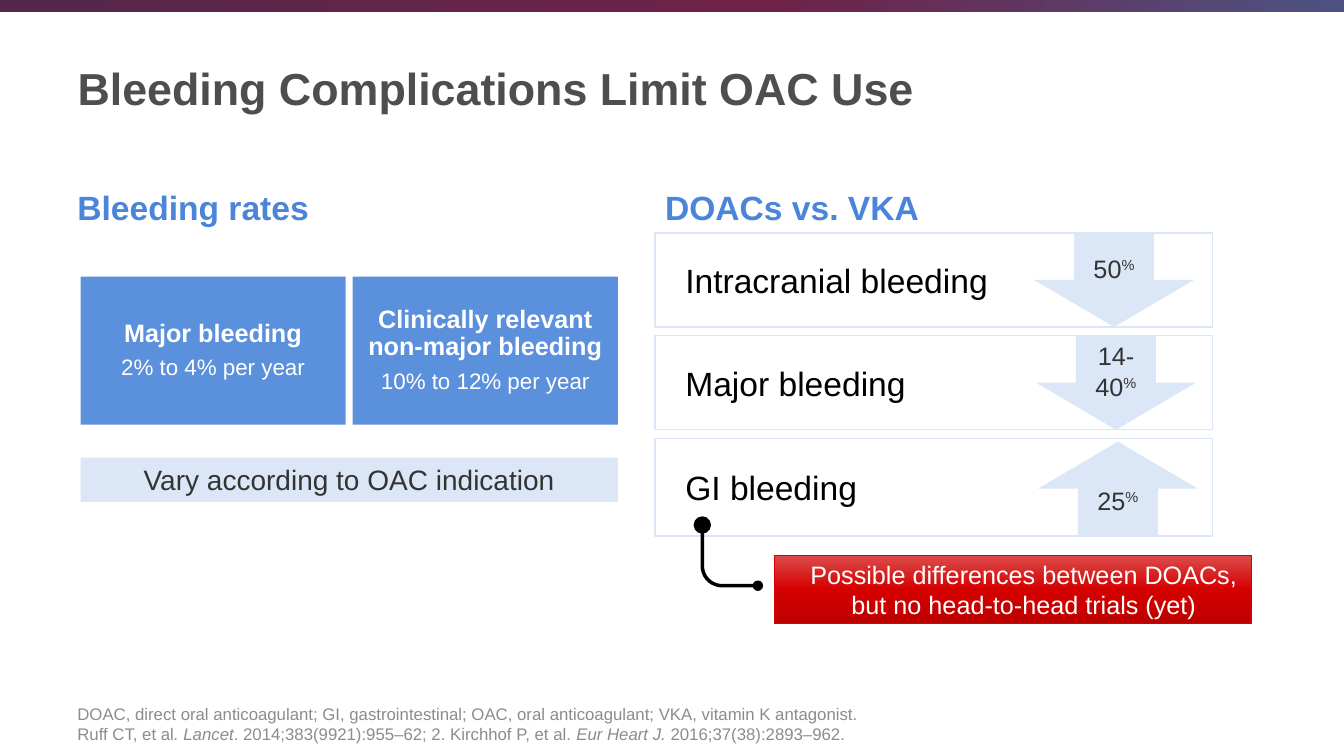
import copy
import math

import lxml.etree
import pptx
import pptx.dml.color
import pptx.enum.shapes
import pptx.enum.text
import pptx.oxml.ns
import pptx.util

Cm, Pt = pptx.util.Cm, pptx.util.Pt
rgb = pptx.dml.color.RGBColor.from_string
qn = pptx.oxml.ns.qn
SHAPE = pptx.enum.shapes.MSO_SHAPE
ALIGN = pptx.enum.text.PP_ALIGN
ANCHOR = pptx.enum.text.MSO_ANCHOR

BLUE, PALE, RED = "4A85D9", "DBE7F7", "D50000"
BLACK, DARK, WHITE = "000000", "333333", "FFFFFF"

prs = pptx.Presentation()
prs.slide_width, prs.slide_height = Cm(33.87), Cm(19.05)
s = prs.slides.add_slide(prs.slide_layouts[5])


def add_box(box, fill=None, line=None, width=1, kind=SHAPE.RECTANGLE, angle=0):
    """Add a shape; fill is a colour, a list of (position, colour) stops, or None."""
    sp = s.shapes.add_shape(kind, *[Cm(v) for v in box])
    sp.shadow.inherit = False
    if fill is None:
        sp.fill.background()
    elif isinstance(fill, str):
        sp.fill.solid()
        sp.fill.fore_color.rgb = rgb(fill)
    else:
        sp.fill.gradient()
        sp.fill.gradient_angle = angle
        stops = sp._element.spPr.find(".//" + qn("a:gsLst"))
        stops.append(copy.deepcopy(stops[-1]))
        for stop, (position, color) in zip(sp.fill.gradient_stops, fill):
            stop.position = position
            stop.color.rgb = rgb(color)
    if line:
        sp.line.color.rgb = rgb(line)
        sp.line.width = Pt(width)
    else:
        sp.line.fill.background()
    return sp


def write(p, text, size, color, bold=False, align=ALIGN.LEFT):
    p.text = text
    p.alignment = align
    p.font.name, p.font.size, p.font.bold = "Arial", Pt(size), bold
    p.font.color.rgb = rgb(color)


# Top band and title
add_box((0, 0, 33.87, 0.3), [(0, "54284B"), (0.57, "6F2147"), (1, "4D5282")])
title = s.shapes.title
title.left, title.top, title.width, title.height = Cm(1.7), Cm(0.56), Cm(29.85), Cm(3.3)
title.text_frame.vertical_anchor = ANCHOR.MIDDLE
write(title.text_frame.paragraphs[0], "Bleeding Complications Limit OAC Use", 32, "4D4E4D", True)

# Column headings and footnote
footnote = ("DOAC, direct oral anticoagulant; GI, gastrointestinal; OAC, oral anticoagulant; "
            "VKA, vitamin K antagonist.\vRuff CT, et al")
for text, left, top, width, height, size, color, bold in [
    ("Bleeding rates", 1.7, 4.06, 14.33, 1.8, 24, BLUE, True),
    ("DOACs vs. VKA", 16.51, 4.06, 14.4, 1.8, 24, BLUE, True),
    (footnote, 1.7, 17.65, 29.85, 1.22, 12, "8C8C8C", False),
]:
    tf = s.shapes.add_textbox(Cm(left), Cm(top), Cm(width), Cm(height)).text_frame
    tf.word_wrap = True
    tf.vertical_anchor = ANCHOR.BOTTOM
    p = tf.paragraphs[0]
    write(p, text, size, color, bold)

# The last paragraph written is the footnote; it goes on with the citations
for text, italic in [
    (". Lancet", True),
    (". 2014;383(9921):955–62; 2. Kirchhof P, et al. ", False),
    ("Eur Heart J. ", True),
    ("2016;37(38):2893–962.", False),
]:
    r = p.add_run()
    r.text = text
    r.font.italic = italic

# Bleeding rate cards
for i, (name, rate) in enumerate([
    ("Major bleeding", "2% to 4% per year"),
    ("Clinically relevant non-major bleeding", "10% to 12% per year"),
]):
    sp = add_box((2.03 + 6.86 * i, 6.97, 6.68, 3.73), BLUE)
    fill_color = sp._element.spPr.find(".//" + qn("a:srgbClr"))
    lxml.etree.SubElement(fill_color, qn("a:alpha"), val="90000")
    tf = sp.text_frame
    tf.margin_left = tf.margin_right = tf.margin_top = tf.margin_bottom = Cm(0.18)
    write(tf.paragraphs[0], name, 18, WHITE, True, ALIGN.CENTER)
    write(tf.add_paragraph(), rate, 16, WHITE, False, ALIGN.CENTER)
    for p, space in zip(tf.paragraphs, (6.3, 2.4)):
        p.line_spacing = 0.9
        p.space_after = Pt(space)

sp = add_box((2.03, 11.53, 13.54, 1.12), PALE)
write(sp.text_frame.paragraphs[0], "Vary according to OAC indication", 20, DARK, align=ALIGN.CENTER)

# Comparison rows, each with an arrow
for i, (name, change, kind, height, arrow_left, arrow_top) in enumerate([
    ("Intracranial bleeding", "50", SHAPE.DOWN_ARROW, 2.37, 26.06, 5.87),
    ("Major bleeding", "14-\v40", SHAPE.DOWN_ARROW, 2.37, 26.11, 8.46),
    ("GI bleeding", "25", SHAPE.UP_ARROW, 2.46, 26.16, 11.13),
]):
    row = add_box((16.51, 5.87 + 2.59 * i, 14.05, height), line=PALE)
    row.text_frame.margin_left = Cm(0.76)
    write(row.text_frame.paragraphs[0], name, 24, BLACK)
    arrow = add_box((arrow_left, arrow_top, 4.03, 2.37), PALE, kind=kind)
    p = arrow.text_frame.paragraphs[0]
    write(p, change, 18, DARK, align=ALIGN.CENTER)
    r = p.add_run()
    r.text = "%"
    r.font._element.set("baseline", "30000")

# Red remark
remark = add_box((19.51, 14, 12.02, 1.7), [(0, "DC4B4B"), (0.5, RED), (1, "BD0000")],
                 RED, 0.5, angle=270)
remark.text_frame.margin_left = Cm(0.81)
write(remark.text_frame.paragraphs[0],
      "Possible differences between DOACs, but no head-to-head trials (yet)",
      18, WHITE, align=ALIGN.CENTER)

# Rounded elbow from the remark up to GI bleeding
left, right, top, bottom, radius = 17.7, 19.1, 13.23, 14.76, 0.5
corner = []
for step in range(13):
    a = math.radians(90 + 7.5 * step)
    corner.append((Cm(left + radius + radius * math.cos(a)),
                   Cm(bottom - radius + radius * math.sin(a))))
builder = s.shapes.build_freeform(Cm(right), Cm(bottom))
builder.add_line_segments(corner + [(Cm(left), Cm(top))], close=False)
elbow = builder.convert_to_shape()
elbow.shadow.inherit = False
elbow.fill.background()
elbow.line.color.rgb = rgb(BLACK)
elbow.line.width = Pt(2.5)
ln = elbow._element.spPr.find(qn("a:ln"))
for end, size in (("a:headEnd", "med"), ("a:tailEnd", "lg")):
    lxml.etree.SubElement(ln, qn(end), type="oval", w=size, len=size)

prs.save("out.pptx")
